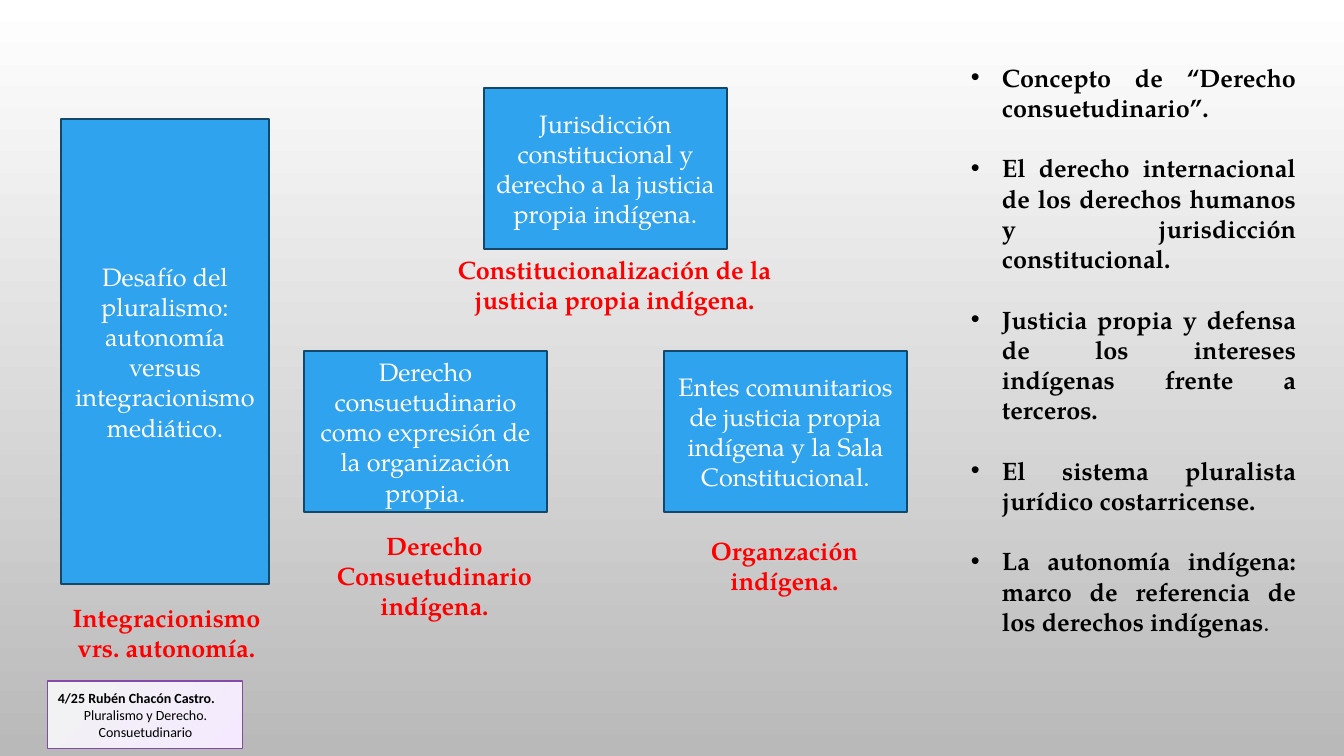
from lxml.etree import SubElement
from pptx import Presentation
from pptx.dml.color import RGBColor
from pptx.enum.shapes import MSO_SHAPE
from pptx.enum.text import MSO_ANCHOR, PP_ALIGN
from pptx.oxml.ns import qn
from pptx.util import Emu, Pt

BLACK = RGBColor(0x00, 0x00, 0x00)
WHITE = RGBColor(0xFF, 0xFF, 0xFF)
GRAY = RGBColor(0xB9, 0xB9, 0xB9)
RED = RGBColor(0xFF, 0x00, 0x00)
BLUE = RGBColor(0x2F, 0xA3, 0xEE)
NAVY = RGBColor(0x15, 0x47, 0x68)
PALE_GRAY = RGBColor(0xF2, 0xF2, 0xF2)
PALE_PURPLE = RGBColor(0xF4, 0xE9, 0xFF)
PURPLE = RGBColor(0x83, 0x4A, 0xA7)
SERIF = "TeX Gyre Pagella"


def px(*lengths):
    return [Emu(round(length * 914400 / 100.8)) for length in lengths]


def style(paragraph, alignment, color, bold, size=18, name=SERIF):
    paragraph.alignment = alignment
    font = paragraph.font
    font.name, font.size, font.bold = name, Pt(size), bold
    font.color.rgb = color


presentation = Presentation()
presentation.slide_width, presentation.slide_height = px(1344, 756)
slide = presentation.slides.add_slide(presentation.slide_layouts[6])
shapes = slide.shapes

footer = shapes.add_shape(MSO_SHAPE.RECTANGLE, *px(48, 681, 195, 68))
footer.line.color.rgb = PURPLE
footer.line.width = Pt(0.75)
footer.shadow.inherit = False
gradients = [
    (slide.background.fill, 270, (WHITE, GRAY)),
    (footer.fill, 315, (PALE_GRAY, PALE_PURPLE)),
]
for fill, angle, colors in gradients:
    fill.gradient()
    fill.gradient_angle = angle
    for position, (stop, color) in enumerate(zip(fill.gradient_stops, colors)):
        stop.position = position
        stop.color.rgb = color

frame = footer.text_frame
frame.word_wrap = True
frame.vertical_anchor = MSO_ANCHOR.MIDDLE
frame.text = "4/25 Rubén Chacón Castro.\nPluralismo y Derecho. Consuetudinario"
author, title = frame.paragraphs
style(author, PP_ALIGN.LEFT, BLACK, True, 10, "Calibri")
style(title, PP_ALIGN.CENTER, BLACK, False, 10, "Calibri")

topics = [
    "Concepto de “Derecho consuetudinario”.",
    "El derecho internacional de los derechos humanos y jurisdicción constitucional.",
    "Justicia propia y defensa de los intereses indígenas frente a terceros.",
    "El sistema pluralista jurídico costarricense.",
    "La autonomía indígena: marco de referencia de los derechos indígenas",
]
frame = shapes.add_textbox(*px(961, 57, 345, 590)).text_frame
frame.word_wrap = True
frame.text = "\n".join(topics)
indent, = px(31)
for index, paragraph in enumerate(frame.paragraphs):
    properties = paragraph._p.get_or_add_pPr()
    properties.set("marL", str(indent))
    properties.set("indent", str(-indent))
    SubElement(properties, qn("a:buFont"), typeface="Arial")
    SubElement(properties, qn("a:buChar"), char="•")
    if index:
        paragraph.space_before = Pt(21.6)
    style(paragraph, PP_ALIGN.JUSTIFY, BLACK, True)
period = paragraph.add_run()
period.text = "."
period.font.bold = False

boxes = [
    (304, 351, 243, 161, "Derecho consuetudinario como expresión de la organización propia."),
    (484, 88, 243, 161, "Jurisdicción constitucional y derecho a la justicia propia indígena."),
    (664, 351, 243, 161, "Entes comunitarios de justicia propia indígena y la Sala Constitucional."),
    (61, 119, 208, 465, "Desafío del pluralismo: autonomía versus integracionismo mediático."),
]
for *place, text in boxes:
    box = shapes.add_shape(MSO_SHAPE.RECTANGLE, *px(*place))
    box.shadow.inherit = False
    box.fill.solid()
    box.fill.fore_color.rgb = BLUE
    box.line.color.rgb = NAVY
    box.line.width = Pt(1.25)
    frame = box.text_frame
    frame.word_wrap = True
    frame.vertical_anchor = MSO_ANCHOR.MIDDLE
    frame.text = text
    style(frame.paragraphs[0], PP_ALIGN.CENTER, WHITE, False)

captions = [
    (54, 597, 225, 71, "Integracionismo vrs. autonomía."),
    (442, 249, 345, 71, "Constitucionalización de la justicia propia indígena."),
    (322, 525, 225, 102, "Derecho Consuetudinario indígena."),
    (672, 530, 225, 71, "Organzación indígena."),
]
for *place, text in captions:
    frame = shapes.add_textbox(*px(*place)).text_frame
    frame.word_wrap = True
    frame.text = text
    style(frame.paragraphs[0], PP_ALIGN.CENTER, RED, True)

presentation.save("out.pptx")
